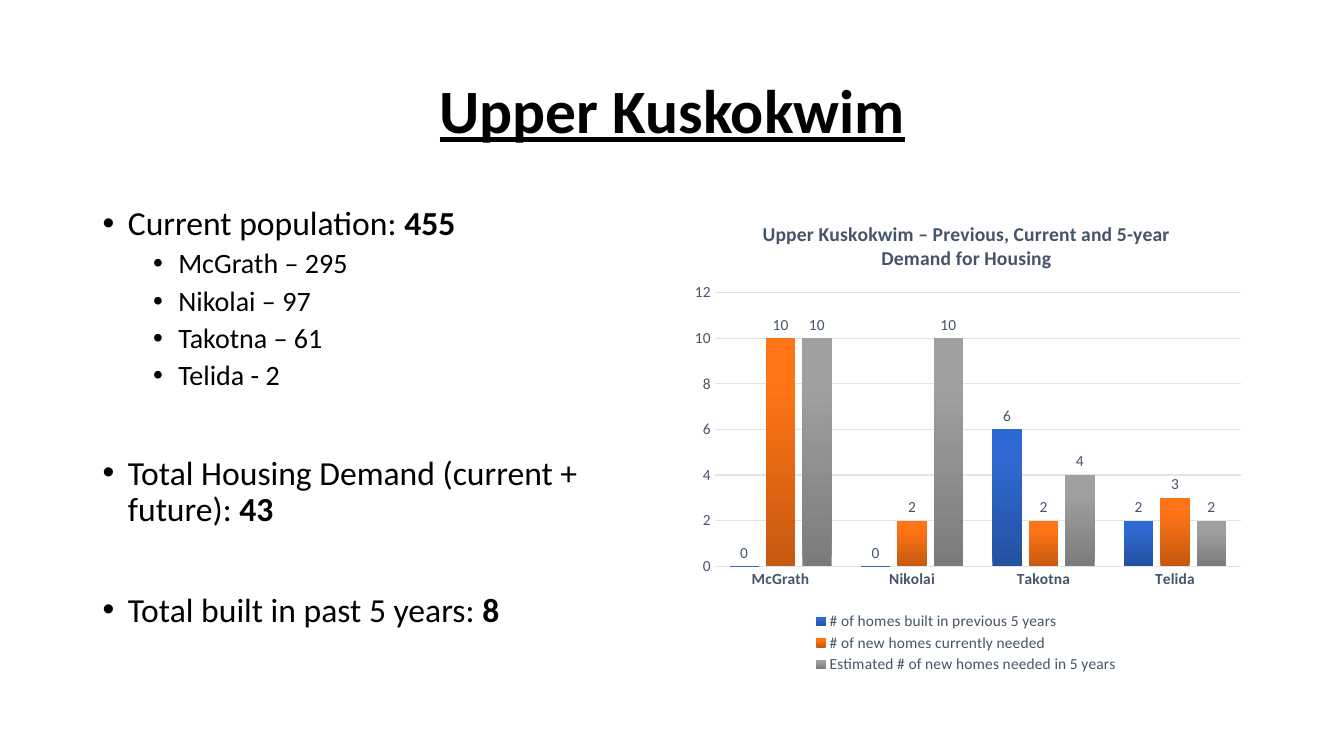
from copy import deepcopy

from lxml.etree import SubElement
from pptx import Presentation
from pptx.chart.data import CategoryChartData
from pptx.dml.color import RGBColor
from pptx.enum.chart import XL_CHART_TYPE, XL_LABEL_POSITION, XL_LEGEND_POSITION, XL_TICK_MARK
from pptx.enum.text import MSO_ANCHOR, PP_ALIGN
from pptx.oxml import parse_xml
from pptx.oxml.ns import nsdecls, qn
from pptx.util import Inches, Pt

BLACK = RGBColor(0x00, 0x00, 0x00)
SLATE = RGBColor(0x44, 0x54, 0x6A)
PALE = RGBColor(0xE0, 0xE5, 0xEB)
BLUES = RGBColor(0x24, 0x51, 0xA1), RGBColor(0x2F, 0x69, 0xD1), RGBColor(0x2C, 0x69, 0xD5)
ORANGES = RGBColor(0xC6, 0x59, 0x10), RGBColor(0xFF, 0x74, 0x16), RGBColor(0xFF, 0x75, 0x17)
GRAYS = RGBColor(0x7B, 0x7B, 0x7B), RGBColor(0xA0, 0xA0, 0xA0), RGBColor(0xA1, 0xA1, 0xA1)
STOPS = 0, 0.8, 1

FACTS = [
    (0, 10, "Current population: ", "455"),
    (1, 5, "McGrath – 295", ""),
    (1, 5, "Nikolai – 97", ""),
    (1, 5, "Takotna – 61", ""),
    (1, 5, "Telida - 2", ""),
    (0, 46, "Total Housing Demand (current + future): ", "43"),
    (0, 46, "Total built in past 5 years: ", "8"),
]
TOWNS = ["McGrath", "Nikolai", "Takotna", "Telida"]
HOMES = [
    ("# of homes built in previous 5 years", (0, 0, 6, 2), BLUES),
    ("# of new homes currently needed", (10, 2, 2, 3), ORANGES),
    ("Estimated # of new homes needed in 5 years", (10, 10, 4, 2), GRAYS),
]


def style(font, size, color, bold=False):
    """Set the face, size, colour and weight of a font."""
    font.name = "Calibri"
    font.size = Pt(size)
    font.color.rgb = color
    font.bold = bold


def add_box(slide, left, top, width, height):
    """Add a wrapping text box and return its text frame."""
    box = slide.shapes.add_textbox(Inches(left), Inches(top), Inches(width), Inches(height))
    box.text_frame.word_wrap = True
    return box.text_frame


def add_title(slide, text):
    """Add the underlined slide title."""
    frame = add_box(slide, 0.92, 0.4, 11.5, 1.45)
    frame.vertical_anchor = MSO_ANCHOR.MIDDLE
    para = frame.paragraphs[0]
    para.text = text
    para.alignment = PP_ALIGN.CENTER
    para.line_spacing = 0.9
    font = para.runs[0].font
    style(font, 44, BLACK, True)
    font.underline = True


def set_bullet(para, level):
    """Give a paragraph a hanging round bullet."""
    para.level = level
    props = para._p.get_or_add_pPr()
    props.set("marL", str(Inches(0.25 + 0.5 * level)))
    props.set("indent", str(Inches(-0.25)))
    SubElement(props, qn("a:buFont")).set("typeface", "Arial")
    SubElement(props, qn("a:buChar")).set("char", "•")


def add_facts(slide, facts):
    """Add the bulleted list, with figures in bold."""
    frame = add_box(slide, 0.92, 2, 5.67, 4.76)
    for place, (level, gap, label, figure) in enumerate(facts):
        para = frame.add_paragraph() if place else frame.paragraphs[0]
        para.line_spacing = 0.9
        para.space_before = Pt(gap)
        set_bullet(para, level)
        for text, bold in ((label, False), (figure, True)):
            if text:
                run = para.add_run()
                run.text = text
                style(run.font, 24 - 4 * level, BLACK, bold)


def shade(series, colors):
    """Fill a series with a gradient that rises from its base."""
    fill = series.format.fill
    fill.gradient()
    fill.gradient_angle = 90
    stops = series._element.find(".//" + qn("a:gsLst"))
    stops.append(deepcopy(stops[-1]))
    for stop, spot, color in zip(fill.gradient_stops, STOPS, colors):
        stop.position = spot
        stop.color.rgb = color


def label_bars(series):
    """Show the values above the bars of a series."""
    labels = series.data_labels
    labels.show_value = True
    labels.position = XL_LABEL_POSITION.OUTSIDE_END
    style(labels.font, 11, SLATE)


def set_axis(axis, line, bold=False):
    """Format an axis and the colour of one of its lines."""
    axis.major_tick_mark = axis.minor_tick_mark = XL_TICK_MARK.NONE
    style(axis.tick_labels.font, 11, SLATE, bold)
    line.color.rgb = PALE
    line.width = Pt(0.75)


def set_layout(part, index, target, **frame):
    """Fix a chart part at fractions of the chart area."""
    old = part.find(qn("c:layout"))
    if old is not None:
        part.remove(old)
    layout = parse_xml(f"<c:layout {nsdecls('c')}><c:manualLayout/></c:layout>")
    if target:
        SubElement(layout[0], qn("c:layoutTarget")).set("val", target)
    for name in ("xMode", "yMode"):
        SubElement(layout[0], qn("c:" + name)).set("val", "edge")
    for name, value in frame.items():
        SubElement(layout[0], qn("c:" + name)).set("val", str(value))
    part.insert(index, layout)


def add_graph(slide, title, towns, homes):
    """Add the clustered column chart of housing demand."""
    data = CategoryChartData()
    data.categories = towns
    for name, values, _ in homes:
        data.add_series(name, values)
    chart = slide.shapes.add_chart(
        XL_CHART_TYPE.COLUMN_CLUSTERED, Inches(6.75), Inches(2), Inches(5.67), Inches(4.76), data
    ).chart
    style(chart.font, 11, BLACK)
    chart.has_title = True
    heading = chart.chart_title.text_frame
    heading.text = title
    style(heading.paragraphs[0].runs[0].font, 14, SLATE, True)
    plot = chart.plots[0]
    plot.gap_width = 100
    plot.overlap = -24
    plot.vary_by_categories = False
    for series, (_, _, colors) in zip(plot.series, homes):
        shade(series, colors)
        label_bars(series)
    set_axis(chart.category_axis, chart.category_axis.format.line, True)
    scale = chart.value_axis
    set_axis(scale, scale.major_gridlines.format.line)
    scale.format.line.fill.background()
    scale.minimum_scale, scale.maximum_scale, scale.major_unit = 0, 12, 2
    chart.has_legend = True
    legend = chart.legend
    legend.position = XL_LEGEND_POSITION.BOTTOM
    legend.include_in_layout = False
    style(legend.font, 11, SLATE)
    area = chart._chartSpace.find(".//" + qn("c:plotArea"))
    set_layout(area, 0, "inner", x=0.06, y=0.19, w=0.92, h=0.57)
    set_layout(legend._element, 1, None, x=0.23, y=0.85, w=0.54, h=0.14)


def main():
    """Build and save the slide."""
    deck = Presentation()
    deck.slide_width, deck.slide_height = Inches(13.33), Inches(7.5)
    slide = deck.slides.add_slide(deck.slide_layouts[6])
    add_title(slide, "Upper Kuskokwim")
    add_facts(slide, FACTS)
    title = "Upper Kuskokwim – Previous, Current and 5-year Demand for Housing"
    add_graph(slide, title, TOWNS, HOMES)
    deck.save("out.pptx")


if __name__ == "__main__":
    main()
